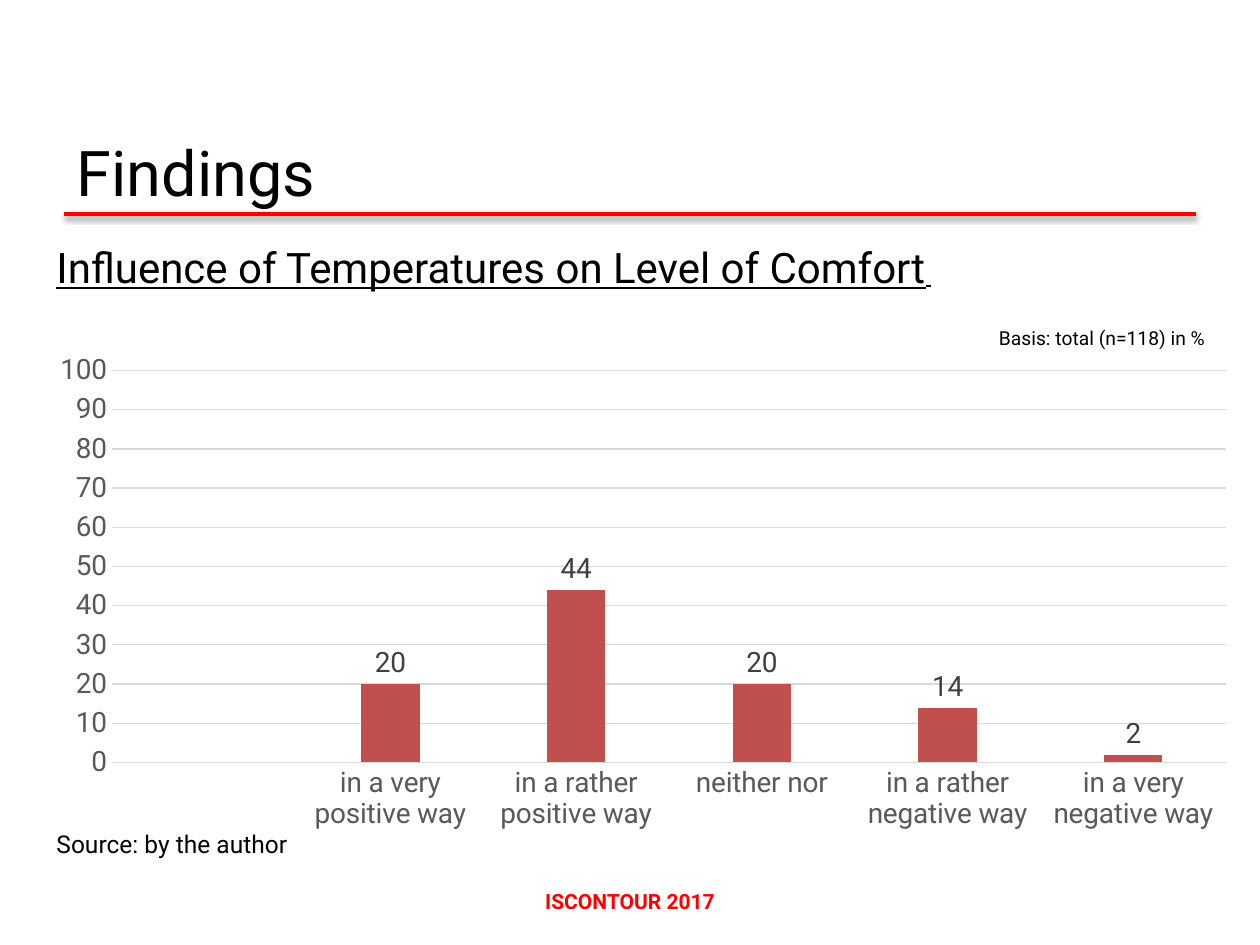
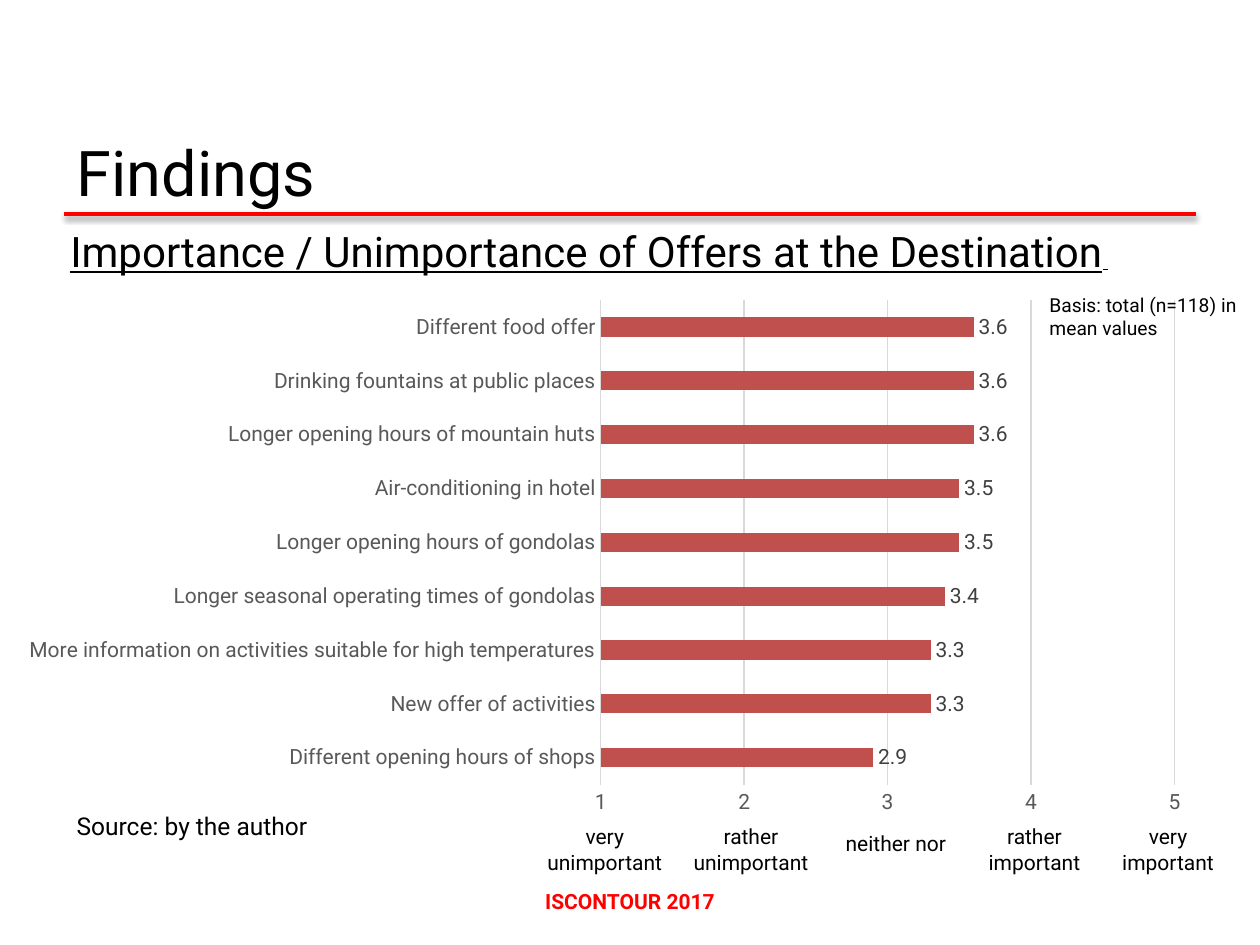
from lxml import etree
from pptx import Presentation
from pptx import util as u
from pptx.chart.data import CategoryChartData
from pptx.dml.color import RGBColor
from pptx.enum import chart as ch, shapes, text
from pptx.oxml import parse_xml
from pptx.oxml.ns import nsdecls, qn

FONT = "Roboto"
RED = RGBColor(0xFF, 0x00, 0x00)
BLACK = RGBColor(0x00, 0x00, 0x00)
BAR = RGBColor(0xC0, 0x50, 0x4D)
GRID = RGBColor(0xD9, 0xD9, 0xD9)
AXIS_TEXT = RGBColor(0x59, 0x59, 0x59)
LABEL_TEXT = RGBColor(0x40, 0x40, 0x40)
COLS, ROWS = 100, 75
TITLE_BOX = (5.1, 2.1, 89.8, 15)


class Deck:
    def __init__(self):
        self.prs = Presentation()
        self.prs.slide_width, self.prs.slide_height = u.Inches(10), u.Inches(7.5)
        self.layout = self.prs.slide_layouts[5]
        self.s = None
        title = self.layout.placeholders[0]
        title.left, title.top, title.width, title.height = self.box(*TITLE_BOX)
        title.text_frame.vertical_anchor = text.MSO_ANCHOR.BOTTOM
        title.text_frame.auto_size = text.MSO_AUTO_SIZE.NONE

    def box(self, left, top, width, height):
        col, row = self.prs.slide_width / COLS, self.prs.slide_height / ROWS
        return [u.Emu(round(n)) for n in (left * col, top * row, width * col, height * row)]

    def style(self, font, size, color=BLACK, bold=False, underline=False):
        font.name, font.size = FONT, u.Pt(size)
        font.color.rgb = color
        font.bold, font.underline = bold, underline

    def run(self, p, words, size, **look):
        r = p.add_run()
        r.text = words
        self.style(r.font, size, **look)

    def slide(self, title):
        first = self.s is None
        self.s = self.prs.slides.add_slide(self.layout)
        if first:
            self.share(self.rule(5.1, 17, 94.9))
            self.share(self.text((31.9, 70, 36.2, 3), ["ISCONTOUR 2017"], 12,
                                 center=True, color=RED, bold=True))
        p = self.s.shapes.title.text_frame.paragraphs[0]
        p.alignment = text.PP_ALIGN.LEFT
        self.run(p, title, 36)

    def share(self, sp):
        self.layout.shapes.element.append(sp.element)

    def rule(self, left, top, right):
        x, y, width, _ = self.box(left, top, right - left, 0)
        line = self.s.shapes.add_connector(shapes.MSO_CONNECTOR.STRAIGHT, x, y, x + width, y)
        line.line.color.rgb, line.line.width = RED, u.Pt(2)
        line.element.spPr.append(parse_xml(
            f'<a:effectLst {nsdecls("a")}><a:outerShdw blurRad="{u.Pt(3.1)}" '
            f'dist="{u.Pt(1.6)}" dir="5400000" rotWithShape="0"><a:srgbClr val="000000">'
            '<a:alpha val="38000"/></a:srgbClr></a:outerShdw></a:effectLst>'))
        return line

    def text(self, area, lines, size, center=False, **look):
        sp = self.s.shapes.add_textbox(*self.box(*area))
        tf = sp.text_frame
        tf.word_wrap = True
        tf.auto_size = text.MSO_AUTO_SIZE.SHAPE_TO_FIT_TEXT
        p = tf.paragraphs[0]
        p.alignment = text.PP_ALIGN.CENTER if center else text.PP_ALIGN.LEFT
        for i, line in enumerate(lines):
            if i:
                p.add_line_break()
            self.run(p, line, size, **look)
        return sp

    def heading(self, area, words):
        tf = self.text(area, [words], 24, underline=True).text_frame
        tf.vertical_anchor = text.MSO_ANCHOR.MIDDLE
        self.run(tf.paragraphs[0], " ", 12, underline=True)

    def chart(self, area, kind, points, size, gap, plot_area, top, step, low=0,
              overlap=0, number_format="0"):
        data = CategoryChartData(number_format=number_format)
        data.categories = [name for name, _ in points]
        data.add_series("Series 1", [value for _, value in points])
        chart = self.s.shapes.add_chart(kind, *self.box(*area), data).chart
        chart.has_legend = chart.has_title = False
        self.style(chart.font, size)

        for axis in (chart.category_axis, chart.value_axis):
            axis.major_tick_mark = axis.minor_tick_mark = ch.XL_TICK_MARK.NONE
            self.style(axis.tick_labels.font, size, AXIS_TEXT)
        chart.category_axis.has_major_gridlines = False
        values = chart.value_axis
        values.minimum_scale, values.maximum_scale, values.major_unit = low, top, step
        values.tick_labels.number_format = "0"
        values.tick_labels.number_format_is_linked = False
        values.has_major_gridlines = True
        values.format.line.fill.background()
        for line in (chart.category_axis.format.line, values.major_gridlines.format.line):
            line.color.rgb, line.width = GRID, u.Pt(0.75)

        plot = chart.plots[0]
        plot.gap_width, plot.overlap, plot.vary_by_categories = gap, overlap, False
        fill = plot.series[0].format.fill
        fill.solid()
        fill.fore_color.rgb = BAR
        plot.has_data_labels = True
        labels = plot.data_labels
        labels.show_value = True
        labels.position = ch.XL_LABEL_POSITION.OUTSIDE_END
        labels.number_format, labels.number_format_is_linked = number_format, False
        self.style(labels.font, size, LABEL_TEXT)
        self.place_plot(chart, plot_area)

    def place_plot(self, chart, plot_area):
        area = chart.element.find(".//" + qn("c:plotArea"))
        layout = area.find(qn("c:layout"))
        if layout is None:
            layout = etree.Element(qn("c:layout"))
            area.insert(0, layout)
        manual = etree.SubElement(layout, qn("c:manualLayout"))
        settings = [("layoutTarget", "inner"), ("xMode", "edge"), ("yMode", "edge")]
        settings += zip("xywh", plot_area)
        for tag, value in settings:
            etree.SubElement(manual, qn("c:" + tag)).set("val", str(value))


def comfort_slide(deck):
    deck.slide("Findings")
    deck.chart((3.5, 26.5, 94.3, 39.4), ch.XL_CHART_TYPE.COLUMN_CLUSTERED, [
        ("", None),
        ("in a very positive way", 20),
        ("in a rather positive way", 44),
        ("neither nor", 20),
        ("in a rather negative way", 14),
        ("in a very negative way", 2),
    ], size=16, gap=219, overlap=-27, plot_area=(0.057, 0.074, 0.938, 0.791), top=100, step=10)
    deck.heading((3.5, 18.7, 94.3, 5), "Influence of Temperatures on Level of Comfort")
    deck.text((3.5, 65.3, 59.3, 3.4), ["Source: by the author"], 14)
    deck.text((78.3, 25.4, 19.4, 2.9), ["Basis: total (n=118) in %"], 11)


def offers_slide(deck):
    deck.slide("Findings")
    deck.chart((-4.3, 22.5, 99.2, 42.5), ch.XL_CHART_TYPE.BAR_CLUSTERED, [
        ("Different opening hours of shops", 2.9),
        ("New offer of activities", 3.3),
        ("More information on activities suitable for high temperatures", 3.3),
        ("Longer seasonal operating times of gondolas", 3.4),
        ("Longer opening hours of gondolas", 3.5),
        ("Air-conditioning in hotel", 3.5),
        ("Longer opening hours of mountain huts", 3.6),
        ("Drinking fountains at public places", 3.6),
        ("Different food offer", 3.6),
    ], size=12, gap=182, plot_area=(0.524, 0.031, 0.459, 0.905), low=1, top=5, step=1,
        number_format="0.0")
    deck.heading((4.6, 17.3, 94.4, 5.2), "Importance / Unimportance of Offers at the Destination")
    deck.text((5.1, 63.9, 59.4, 3.5), ["Source: by the author"], 14)
    deck.text((82.3, 22.8, 17.9, 4.7), ["Basis: total (n=118) in mean values"], 11)
    scale = [
        (42.1, ["very", "unimportant"]),
        (53.7, ["rather", "unimportant"]),
        (65.2, ["neither nor"]),
        (76.2, ["rather", "important"]),
        (86.8, ["very", "important"]),
    ]
    for left, lines in scale:
        top, height = (64.9, 5) if len(lines) > 1 else (65.4, 3)
        deck.text((left, top, 11.8, height), lines, 12, center=True)


def main():
    deck = Deck()
    comfort_slide(deck)
    offers_slide(deck)
    deck.prs.save("out.pptx")


if __name__ == "__main__":
    main()
